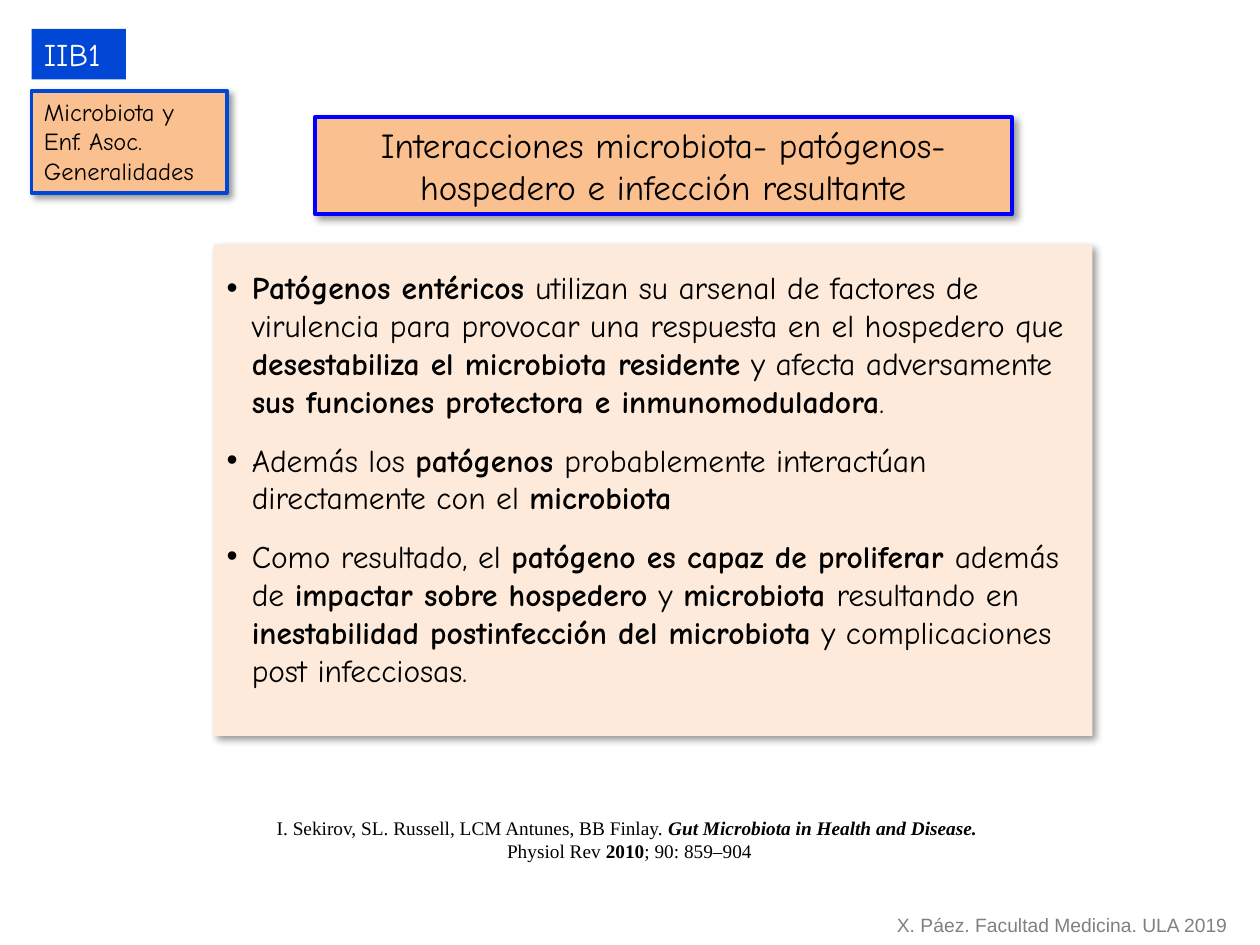
from lxml.etree import SubElement
from pptx import Presentation
from pptx.dml.color import RGBColor
from pptx.enum.shapes import MSO_SHAPE
from pptx.enum.text import MSO_ANCHOR, MSO_AUTO_SIZE, PP_ALIGN
from pptx.oxml.ns import qn
from pptx.util import Inches, Pt

BLACK = RGBColor(0x00, 0x00, 0x00)
WHITE = RGBColor(0xFF, 0xFF, 0xFF)
GRAY = RGBColor(0x80, 0x80, 0x80)
BLUE = RGBColor(0x00, 0x47, 0xD6)
PURE_BLUE = RGBColor(0x00, 0x00, 0xFF)
ORANGE = RGBColor(0xFA, 0xC0, 0x90)
CREAM = RGBColor(0xFD, 0xEA, 0xDA)
COMIC = "Comic Neue"

PLAIN, BOLD, BOLD_ITALIC = (False, False), (True, False), (True, True)

TITLE = [[("Interacciones microbiota- patógenos- hospedero e infección resultante", PLAIN)]]
CODE = [[("IIB1", PLAIN)]]
TOPIC = [[(line, PLAIN)] for line in ("Microbiota y", "Enf. Asoc.", "Generalidades")]
POINTS = [
    [("Patógenos entéricos ", BOLD),
     ("utilizan su arsenal de factores de virulencia para provocar una respuesta en el hospedero que ", PLAIN),
     ("desestabiliza el microbiota residente", BOLD),
     (" y afecta adversamente ", PLAIN),
     ("sus funciones protectora e inmunomoduladora", BOLD),
     (".", PLAIN)],
    [("Además los ", PLAIN),
     ("patógenos ", BOLD),
     ("probablemente interactúan directamente con el ", PLAIN),
     ("microbiota", BOLD)],
    [("Como resultado, el ", PLAIN),
     ("patógeno es capaz de proliferar ", BOLD),
     ("además de ", PLAIN),
     ("impactar sobre hospedero ", BOLD),
     ("y ", PLAIN),
     ("microbiota ", BOLD),
     ("resultando en ", PLAIN),
     ("inestabilidad postinfección del microbiota", BOLD),
     (" y complicaciones post infecciosas.", PLAIN)],
]
CITATION = [
    [("I. Sekirov, SL. Russell, LCM Antunes, BB Finlay. ", PLAIN),
     ("Gut Microbiota in Health and Disease. ", BOLD_ITALIC)],
    [("Physiol Rev ", PLAIN), ("2010", BOLD), ("; 90: 859–904", PLAIN)],
]
CREDIT = [[("X. Páez. Facultad Medicina. ULA 2019", PLAIN)]]


def write(shape, paragraphs, size, font=COMIC, color=BLACK, align=PP_ALIGN.LEFT,
          wrap=True, bullets=False, gap=0):
    frame = shape.text_frame
    frame.word_wrap = wrap
    frame.auto_size = MSO_AUTO_SIZE.NONE
    frame.vertical_anchor = MSO_ANCHOR.TOP
    for index, pieces in enumerate(paragraphs):
        paragraph = frame.add_paragraph() if index else frame.paragraphs[0]
        paragraph.alignment = align
        if index and gap:
            paragraph.space_before = Pt(gap)
        if bullets:
            properties = paragraph._p.get_or_add_pPr()
            properties.set("marL", str(Inches(0.2)))
            properties.set("indent", str(-Inches(0.2)))
            SubElement(properties, qn("a:buFont"), typeface="Arial")
            SubElement(properties, qn("a:buChar"), char="•")
        for text, (bold, italic) in pieces:
            run = paragraph.add_run()
            run.text = text
            run.font.name = font
            run.font.size = Pt(size)
            run.font.bold = bold
            run.font.italic = italic
            run.font.color.rgb = color


def paint(shape, fill, line=None, shadow=True):
    shape.fill.solid()
    shape.fill.fore_color.rgb = fill
    if line is None:
        shape.line.fill.background()
    else:
        shape.line.color.rgb = line
        shape.line.width = Pt(2.25)
    shape.shadow.inherit = False
    if shadow:
        effects = shape._element.spPr.find(qn("a:effectLst"))
        outer = SubElement(effects, qn("a:outerShdw"), blurRad=str(Pt(4)), dist=str(Pt(3)),
                           dir=str(45 * 60000), algn="tl", rotWithShape="0")
        tint = SubElement(outer, qn("a:srgbClr"), val=str(BLACK))
        SubElement(tint, qn("a:alpha"), val="40000")


def main():
    deck = Presentation()
    deck.slide_width, deck.slide_height = Inches(10), Inches(7.5)
    slide = deck.slides.add_slide(deck.slide_layouts[5])
    shapes = slide.shapes

    def panel(*box):
        return shapes.add_shape(MSO_SHAPE.RECTANGLE, *map(Inches, box))

    def label(*box):
        return shapes.add_textbox(*map(Inches, box))

    title = shapes.title
    title.left, title.top, title.width, title.height = map(Inches, (2.5, 0.93, 5.53, 0.77))
    paint(title, ORANGE, PURE_BLUE)
    write(title, TITLE, 20, align=PP_ALIGN.CENTER)

    points = panel(1.7, 1.94, 6.97, 3.9)
    paint(points, CREAM)
    write(points, POINTS, 18, bullets=True, gap=12)
    points.text_frame.margin_top = Inches(0.19)

    write(label(7.02, 7.2, 2.85, 0.29), CREDIT, 11, "Arial", GRAY, wrap=False)
    write(label(2, 6.43, 5.99, 0.47), CITATION, 11, "Times New Roman", align=PP_ALIGN.CENTER)

    topic = panel(0.25, 0.72, 1.55, 0.81)
    paint(topic, ORANGE, BLUE)
    write(topic, TOPIC, 14)

    code = panel(0.25, 0.23, 0.75, 0.4)
    paint(code, BLUE, shadow=False)
    write(code, CODE, 18, color=WHITE)

    deck.save("out.pptx")


if __name__ == "__main__":
    main()
